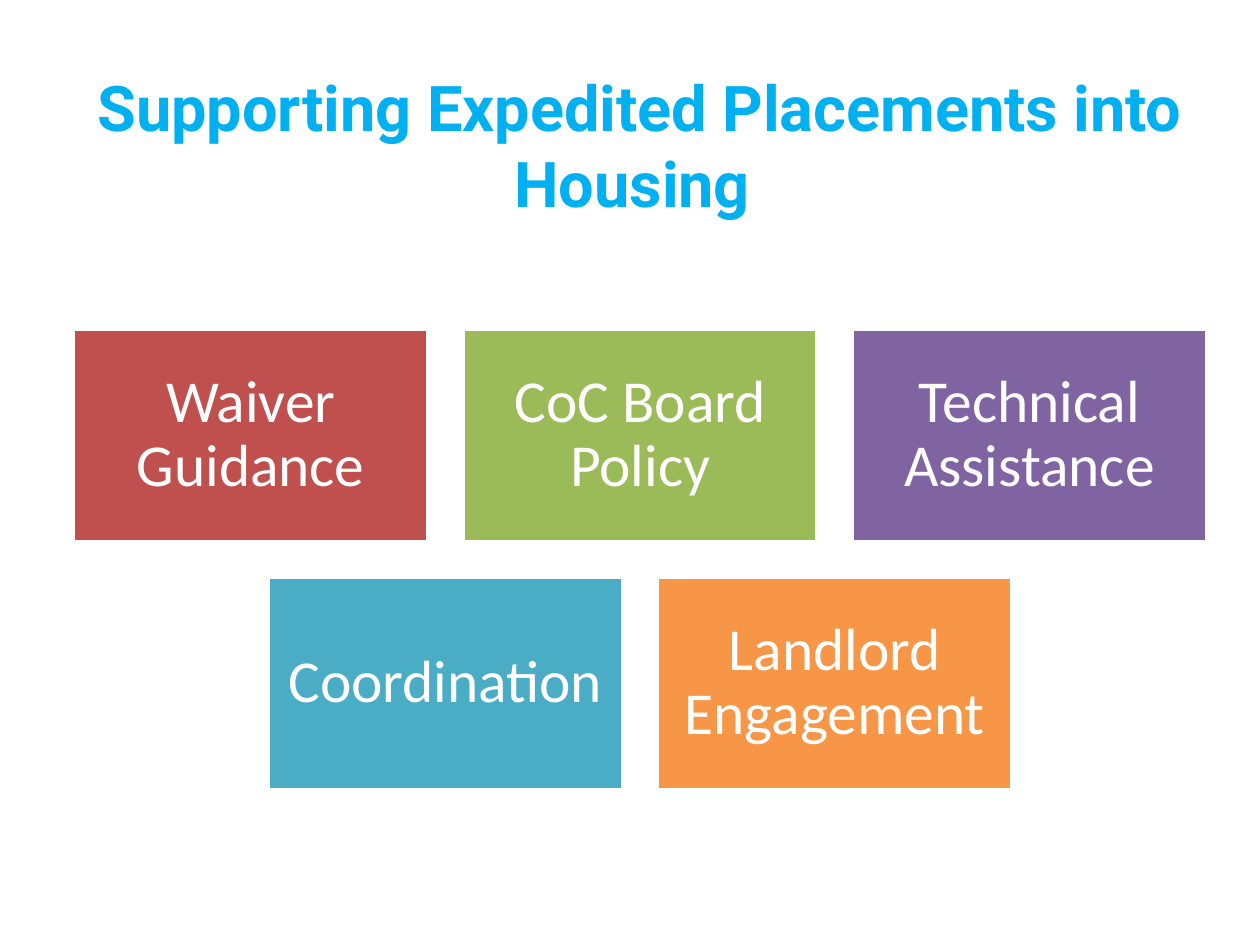
import pptx
import pptx.dml.color
import pptx.enum.shapes
import pptx.enum.text
import pptx.util
from dataclasses import dataclass

Inches = pptx.util.Inches
Pt = pptx.util.Pt

TITLE = "Supporting Expedited Placements into Housing "
SUPPORT_ROWS = [
    [("Waiver Guidance", "C0504D"),
     ("CoC Board Policy", "9BBB59"),
     ("Technical Assistance", "8064A2")],
    [("Coordination", "4BACC6"),
     ("Landlord Engagement", "F79646")],
]


@dataclass(frozen=True)
class Theme:
    title_font: str = "Roboto"
    title_size: int = 36
    title_color: str = "00B0F0"
    card_font: str = "Calibri"
    card_size: int = 34
    white: str = "FFFFFF"
    border_width: int = 2


THEME = Theme()

TITLE_LEFT, TITLE_TOP, TITLE_WIDTH, TITLE_HEIGHT = 0.58, 0.52, 9, 1.25
CARD_WIDTH, CARD_HEIGHT, GAP = 2.81, 1.69, 0.28
CARDS_TOP = 2.61
CENTER = TITLE_LEFT + TITLE_WIDTH / 2


def rgb(value):
    return pptx.dml.color.RGBColor.from_string(value)


def write_text(shape, text, *, font, size, color, bold=False,
               line_spacing=1.0, inset_x=0.1, inset_y=0.05):
    frame = shape.text_frame
    frame.word_wrap = True
    frame.vertical_anchor = pptx.enum.text.MSO_ANCHOR.MIDDLE
    frame.margin_left = frame.margin_right = Inches(inset_x)
    frame.margin_top = frame.margin_bottom = Inches(inset_y)
    paragraph = frame.paragraphs[0]
    paragraph.alignment = pptx.enum.text.PP_ALIGN.CENTER
    paragraph.line_spacing = line_spacing
    run = paragraph.add_run()
    run.text = text
    run.font.name = font
    run.font.size = Pt(size)
    run.font.bold = bold
    run.font.color.rgb = rgb(color)


def add_card(slide, label, fill, left, top):
    card = slide.shapes.add_shape(
        pptx.enum.shapes.MSO_SHAPE.RECTANGLE,
        Inches(left), Inches(top), Inches(CARD_WIDTH), Inches(CARD_HEIGHT))
    card.shadow.inherit = False
    card.fill.solid()
    card.fill.fore_color.rgb = rgb(fill)
    card.line.color.rgb = rgb(THEME.white)
    card.line.width = Pt(THEME.border_width)
    write_text(card, label, font=THEME.card_font, size=THEME.card_size,
               color=THEME.white, line_spacing=0.9, inset_x=0.14, inset_y=0.14)


def main():
    deck = pptx.Presentation()
    deck.slide_width, deck.slide_height = Inches(10), Inches(7.5)
    slide = deck.slides.add_slide(deck.slide_layouts[6])

    title = slide.shapes.add_textbox(Inches(TITLE_LEFT), Inches(TITLE_TOP),
                                     Inches(TITLE_WIDTH), Inches(TITLE_HEIGHT))
    write_text(title, TITLE, font=THEME.title_font, size=THEME.title_size,
               color=THEME.title_color, bold=True)

    for row_index, row in enumerate(SUPPORT_ROWS):
        row_width = len(row) * (CARD_WIDTH + GAP) - GAP
        top = CARDS_TOP + row_index * (CARD_HEIGHT + GAP)
        for column, (label, fill) in enumerate(row):
            left = CENTER - row_width / 2 + column * (CARD_WIDTH + GAP)
            add_card(slide, label, fill, left, top)

    deck.save("out.pptx")


if __name__ == "__main__":
    main()
